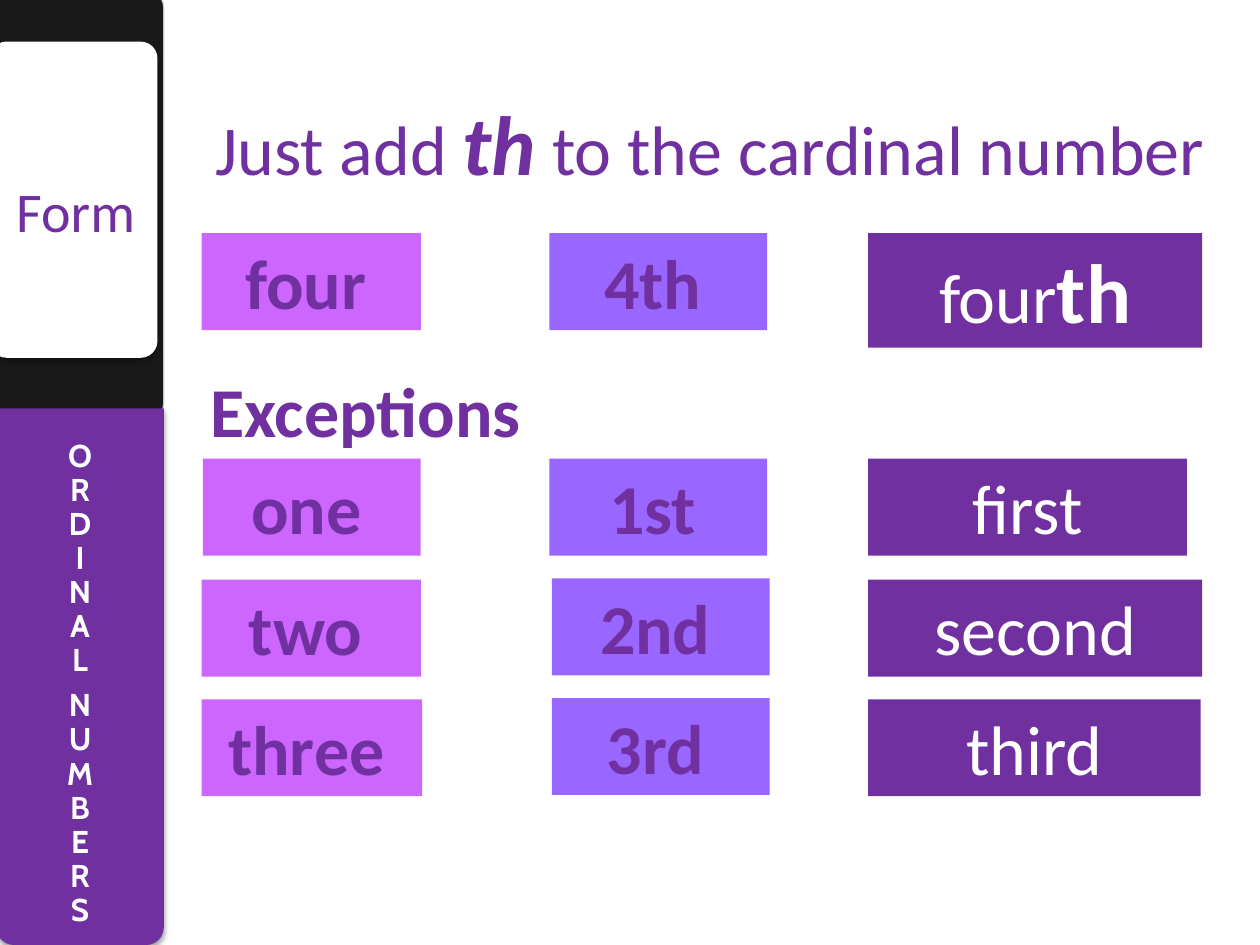
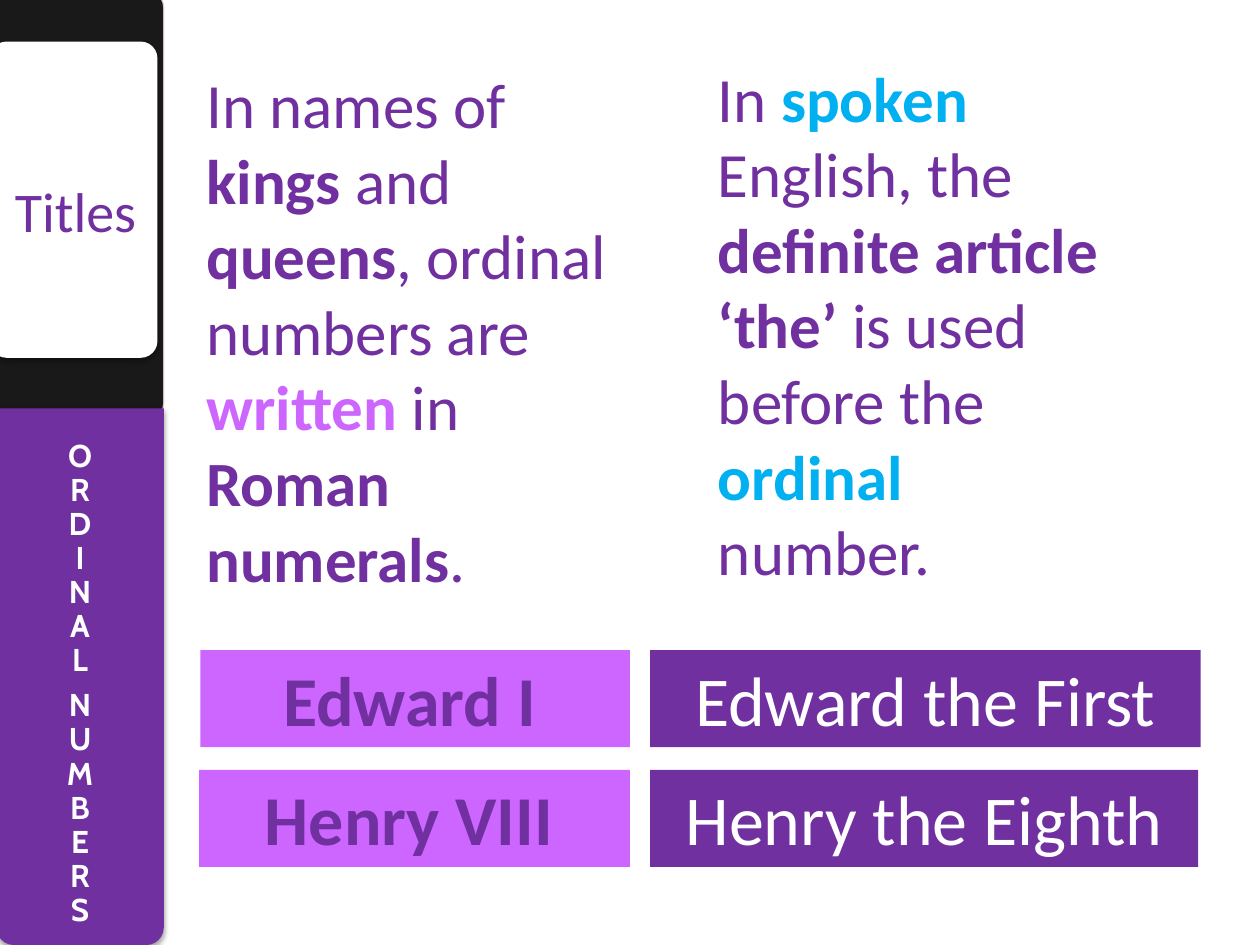
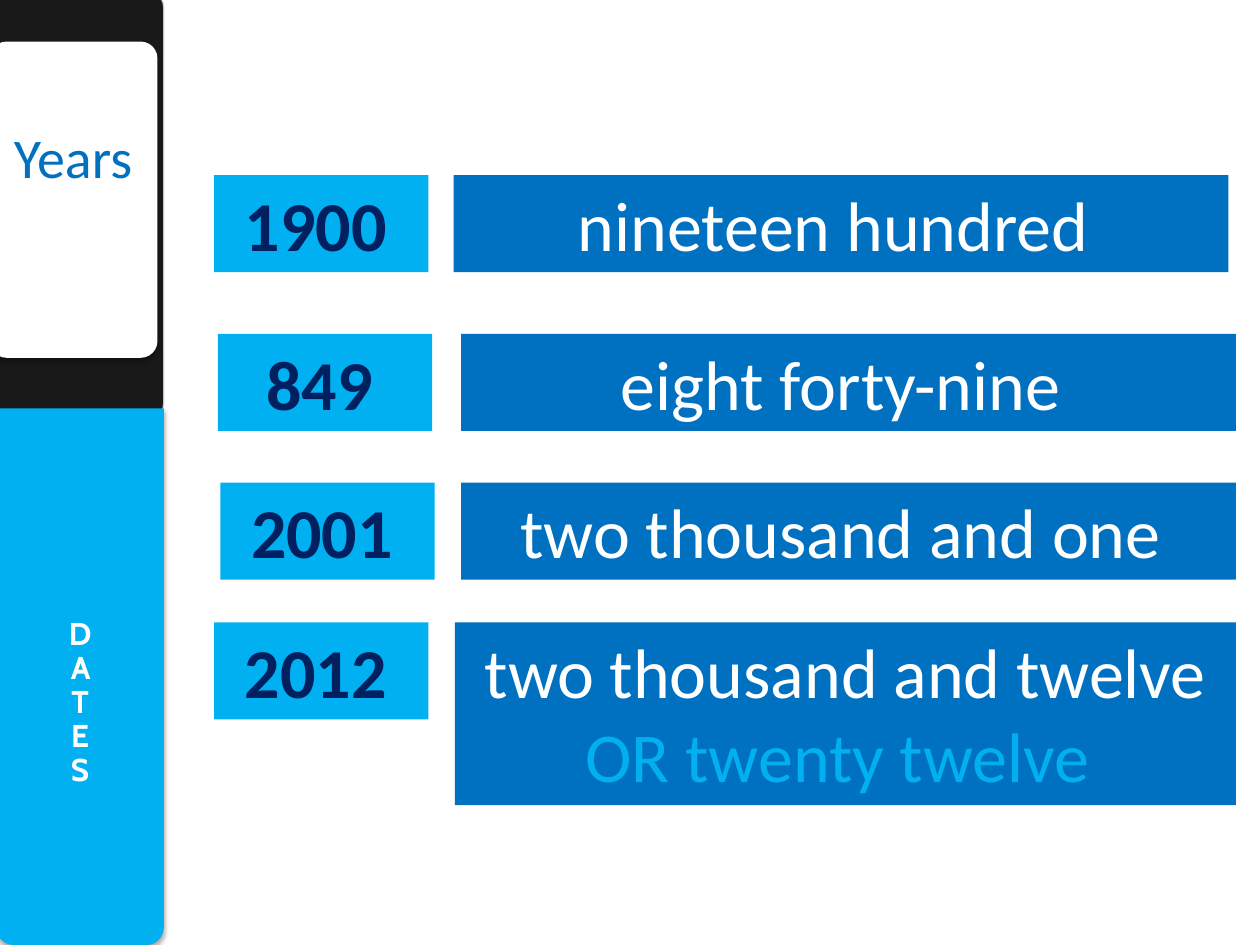
import pptx
import pptx.util
import pptx.dml.color
import pptx.enum.shapes
import pptx.enum.text
import pptx.oxml
import pptx.oxml.ns

Inches = pptx.util.Inches
Pt = pptx.util.Pt
PRESETS = pptx.enum.shapes.MSO_SHAPE
ALIGN = pptx.enum.text.PP_ALIGN
ANCHOR = pptx.enum.text.MSO_ANCHOR

COLOURS = {
    "black": "000000", "white": "FFFFFF", "edge": "E8D0D0",
    "purple": "7030A0", "orchid": "CC66FF", "violet": "9966FF",
    "sky": "00B0F0", "blue": "0070C0", "navy": "002060",
}
BODY_FONT = "Calibri"
BAND_FONT = "Cabin"
ROW_HEIGHT = 0.77

CELL_STYLES = {
    "cardinal": ("orchid", "purple", True),
    "numeral": ("violet", "purple", True),
    "ordinal": ("purple", "white", False),
    "year": ("sky", "navy", True),
    "spoken year": ("blue", "white", False),
}

BOLD = {"bold": True}
PURPLE_BAND = {"colour": "purple", "words": ["ORDINAL", "NUMBERS"], "insets": (0.3, 0.14)}
SKY_BAND = {"colour": "sky", "words": ["DATES"], "insets": (0.55, 0.09)}

SLIDES = [
    {
        "band": PURPLE_BAND,
        "caption": ("Form ", "purple", -0.01, 1.35),
        "passages": [
            ((1.61, 0.68, 8.11, 0.91), 40,
             [("Just add ", {}), ("th", {"bold": True, "italic": True, "size": 48}),
              (" to the cardinal number", {})]),
            ((1.57, 2.87, 7.95, ROW_HEIGHT), 40, [("Exceptions", BOLD)]),
        ],
        "cells": [
            ("cardinal", (1.6, 1.85, 1.74), "four"),
            ("numeral", (4.36, 1.85, 1.73), "4th"),
            ("ordinal", (6.89, 1.85, 2.65, 0.91), "four", ("th", {"bold": True, "size": 48})),
            ("cardinal", (1.61, 3.64, 1.73), "one"),
            ("numeral", (4.36, 3.64, 1.73), "1st"),
            ("ordinal", (6.89, 3.64, 2.53), "first"),
            ("cardinal", (1.6, 4.6, 1.74), "two"),
            ("numeral", (4.38, 4.59, 1.73), "2nd"),
            ("ordinal", (6.89, 4.6, 2.65), "second"),
            ("cardinal", (1.6, 5.55, 1.75), "three"),
            ("numeral", (4.38, 5.54, 1.73), "3rd"),
            ("ordinal", (6.89, 5.55, 2.64), "third"),
        ],
    },
    {
        "band": PURPLE_BAND,
        "caption": ("Titles", "purple", -0.01, 1.35),
        "passages": [
            ((1.54, 0.47, 3.46, 4.95), 36,
             [("In names of ", {}), ("kings", BOLD), (" and ", {}), ("queens", BOLD),
              (", ordinal numbers are ", {}),
              ("written ", {"bold": True, "colour": "orchid"}), ("in ", {}),
              ("Roman numerals", BOLD), (".", {})]),
            ((5.6, 0.42, 3.46, 4.34), 36,
             [("In ", {}), ("spoken ", {"bold": True, "colour": "sky"}),
              ("English, the ", {}), ("definite article ‘the’", BOLD),
              (" is used before the ", {}),
              ("ordinal ", {"bold": True, "colour": "sky"}), ("number.", {})]),
        ],
        "cells": [
            ("cardinal", (1.59, 5.16, 3.41), "Edward I"),
            ("ordinal", (5.16, 5.16, 4.37), "Edward the First"),
            ("cardinal", (1.58, 6.11, 3.42), "Henry VIII"),
            ("ordinal", (5.16, 6.11, 4.35), "Henry the Eighth"),
        ],
    },
    {
        "band": SKY_BAND,
        "caption": ("Years", "blue", -0.03, 0.92),
        "passages": [],
        "cells": [
            ("year", (1.7, 1.39, 1.7), "1900"),
            ("spoken year", (3.6, 1.39, 6.15), "nineteen hundred "),
            ("year", (1.73, 2.65, 1.7), "849"),
            ("spoken year", (3.66, 2.65, 6.15), "eight forty-nine "),
            ("year", (1.75, 3.83, 1.7), "2001"),
            ("spoken year", (3.66, 3.83, 6.15), "two thousand and one "),
            ("year", (1.7, 4.94, 1.7), "2012"),
            ("spoken year", (3.61, 4.94, 6.2, 1.45), "two thousand and twelve ",
             ("OR twenty twelve ", {"colour": "sky"})),
        ],
    },
]


def rgb(colour):
    return pptx.dml.color.RGBColor.from_string(COLOURS[colour])


def add_block(shapes, preset, box, colour):
    block = shapes.add_shape(preset, *map(Inches, box))
    block.shadow.inherit = False
    block.fill.solid()
    block.fill.fore_color.rgb = rgb(colour)
    block.line.fill.background()
    return block


def add_run(paragraph, text, size, colour, font=BODY_FONT, bold=False, italic=False):
    run = paragraph.add_run()
    run.text = text
    run.font.name = font
    run.font.size = Pt(size)
    run.font.bold = bold
    run.font.italic = italic
    run.font.color.rgb = rgb(colour)


def write(frame, runs, size, colour, align, bold=False):
    frame.word_wrap = True
    frame.vertical_anchor = ANCHOR.TOP
    paragraph = frame.paragraphs[0]
    paragraph.alignment = align
    for text, changes in runs:
        add_run(paragraph, text, **{"size": size, "colour": colour, "bold": bold, **changes})


def add_soft_shadow(block):
    effects = block._element.spPr.find(pptx.oxml.ns.qn("a:effectLst"))
    effects.append(pptx.oxml.parse_xml(
        f'<a:outerShdw {pptx.oxml.ns.nsdecls("a")} blurRad="{Pt(3.1)}" dist="{Pt(1.8)}" '
        'dir="5400000" rotWithShape="0">'
        f'<a:srgbClr val="{COLOURS["black"]}"><a:alpha val="35000"/></a:srgbClr></a:outerShdw>'))


def add_band(slide, band):
    parts = slide.shapes.add_group_shape().shapes
    backing = add_block(parts, PRESETS.ROUNDED_RECTANGLE, (-0.12, -0.08, 1.42, 3.42), "black")
    backing.adjustments[0] = 0.1
    backing.line.color.rgb = rgb("edge")
    backing.line.width = Pt(0.75)
    for tint in backing._element.spPr.iter(pptx.oxml.ns.qn("a:srgbClr")):
        tint.append(pptx.oxml.parse_xml(
            f'<a:alpha {pptx.oxml.ns.nsdecls("a")} val="90000"/>'))

    card = add_block(parts, PRESETS.ROUNDED_RECTANGLE, (-0.08, 0.33, 1.33, 2.51), "white")
    card.adjustments[0] = 0.1
    add_soft_shadow(card)

    topic = add_block(parts, PRESETS.ROUND_2_SAME_RECTANGLE, (-0.03, 3.24, 1.33, 4.26),
                      band["colour"])
    topic.adjustments[0] = 0.105
    topic.adjustments[1] = 0
    topic.rotation = 180
    add_soft_shadow(topic)

    frame = parts.add_textbox(*map(Inches, (0.01, 3.24, 1.25, 4.22))).text_frame
    frame.word_wrap = True
    frame.vertical_anchor = ANCHOR.MIDDLE
    frame.margin_left = frame.margin_right = Inches(0.08)
    frame.margin_top, frame.margin_bottom = map(Inches, band["insets"])
    frame._txBody.bodyPr.set("vert", "wordArtVert")
    for position, word in enumerate(band["words"]):
        paragraph = frame.add_paragraph() if position else frame.paragraphs[0]
        paragraph.alignment = ALIGN.CENTER
        paragraph.line_spacing = 0.9
        paragraph.space_after = Pt(6.3)
        add_run(paragraph, word, 18, "white", BAND_FONT, bold=True)


def add_cell(slide, kind, box, text, *extra_runs):
    fill, ink, bold = CELL_STYLES[kind]
    left, top, width, *height = box
    cell = add_block(slide.shapes, PRESETS.RECTANGLE,
                     (left, top, width, *(height or [ROW_HEIGHT])), fill)
    runs = [(text, {}), *extra_runs]
    if bold:
        runs.append((" ", {"size": 28}))
    write(cell.text_frame, runs, 40, ink, ALIGN.CENTER, bold)


def build_slide(deck, content):
    slide = deck.slides.add_slide(deck.slide_layouts[6])
    add_band(slide, content["band"])
    text, colour, left, top = content["caption"]
    caption = add_block(slide.shapes, PRESETS.RECTANGLE, (left, top, 1.22, 0.64), "white")
    write(caption.text_frame, [(text, {})], 32, colour, ALIGN.CENTER)
    for box, size, runs in content["passages"]:
        passage = slide.shapes.add_textbox(*map(Inches, box))
        write(passage.text_frame, runs, size, "purple", ALIGN.LEFT)
    for cell in content["cells"]:
        add_cell(slide, *cell)


def main():
    deck = pptx.Presentation()
    deck.slide_width = Inches(10)
    deck.slide_height = Inches(7.5)
    for content in SLIDES:
        build_slide(deck, content)
    deck.save("out.pptx")


if __name__ == "__main__":
    main()
